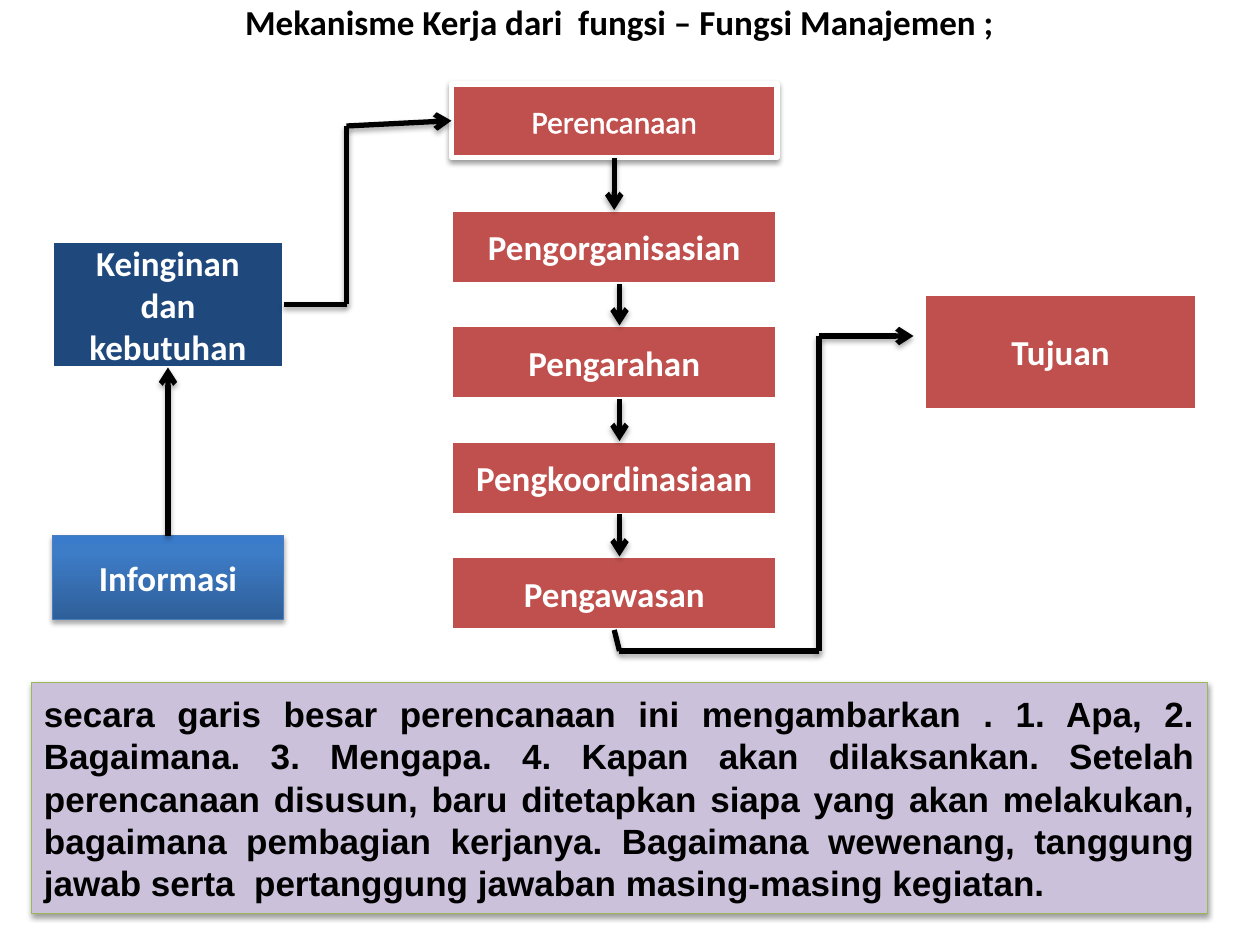
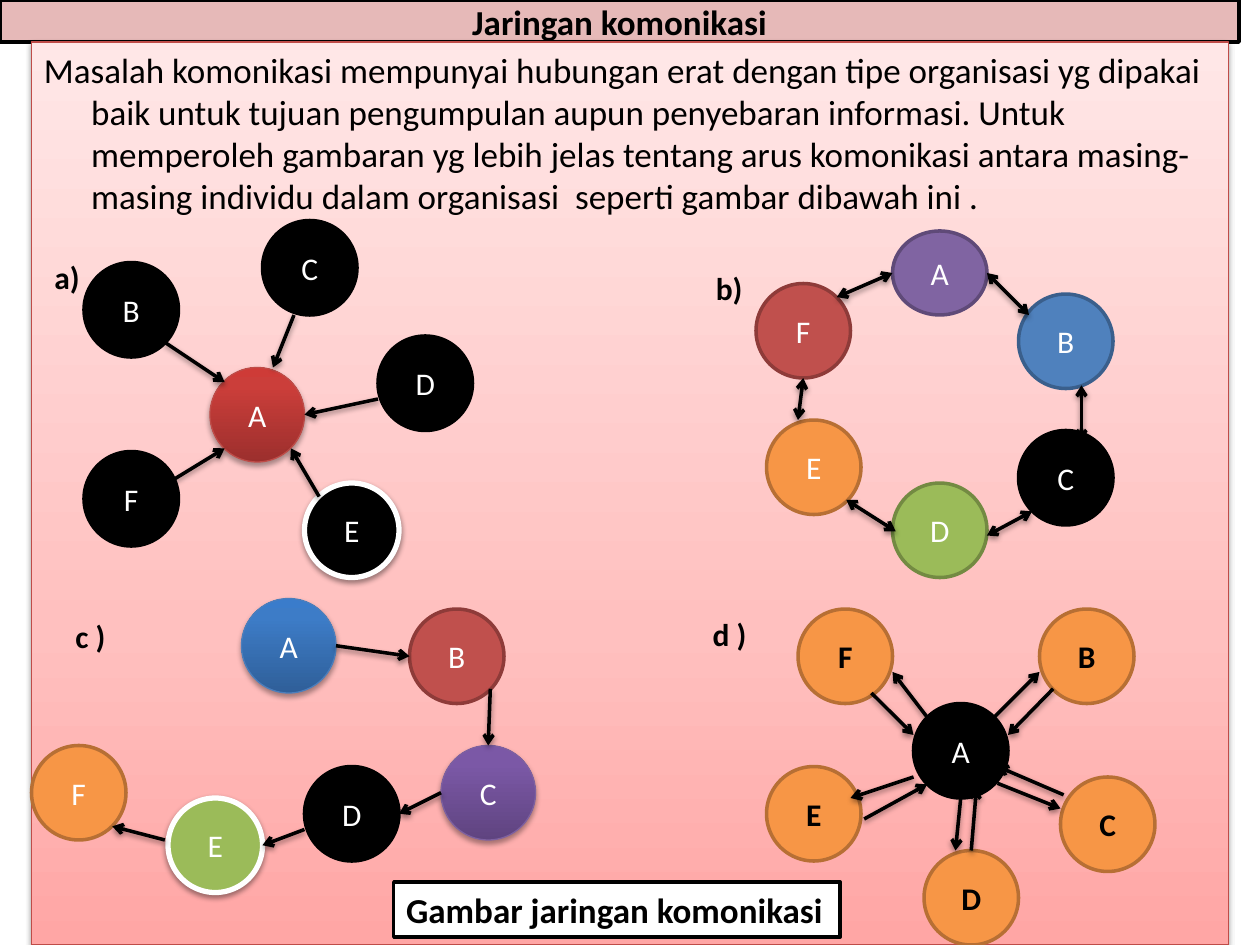
from dataclasses import dataclass, replace
from itertools import pairwise
from typing import NamedTuple

from lxml.etree import SubElement
from pptx import Presentation
from pptx.dml.color import RGBColor
from pptx.enum.shapes import MSO_CONNECTOR, MSO_SHAPE
from pptx.enum.text import MSO_ANCHOR, MSO_AUTO_SIZE, PP_ALIGN
from pptx.oxml.ns import qn
from pptx.util import Cm, Pt

GRID_CM = 2.54 / 12


class Shadow(NamedTuple):
    opacity: int
    distance: float


@dataclass(frozen=True)
class Theme:
    font: str = "Calibri"
    note_font: str = "Arial"
    large: int = 20
    small: int = 18
    black: str = "000000"
    white: str = "FFFFFF"
    navy: str = "1F497D"
    red: str = "C0504D"
    red_edge: str = "8E3B39"
    red_line: str = "BF4C48"
    blue: str = "4F81BD"
    blue_edge: str = "3A5F8C"
    blue_line: str = "4B7EBC"
    green: str = "9BBB59"
    green_edge: str = "738A42"
    green_line: str = "98B955"
    purple: str = "8064A2"
    purple_edge: str = "5F4A78"
    purple_line: str = "7D60A0"
    orange: str = "F79646"
    orange_edge: str = "B76F34"
    lilac: str = "CCC1DA"
    pink: str = "E6B9B8"
    blue_gradient: tuple = ((0, "2F5F99"), (80, "3D7CC7"), (100, "3A7CCB"))
    red_gradient: tuple = ((0, "9C2F2D"), (80, "CB3E3A"), (100, "CE3B37"))
    purple_gradient: tuple = ((0, "5F4480"), (80, "7B58A6"), (100, "7C57A8"))
    rose_gradient: tuple = ((0, "FFA6A5"), (35, "FFC0BF"), (100, "FFE7E7"))
    strong_shadow: Shadow = Shadow(35, 1.8)
    soft_shadow: Shadow = Shadow(38, 1.6)


THEME = Theme()


@dataclass(frozen=True)
class Style:
    fill: str | tuple | None
    line: str | None
    width: float = 2
    shadow: Shadow | None = None
    color: str = THEME.white
    size: int = THEME.small
    bold: bool = False
    font: str = THEME.font
    align: PP_ALIGN = PP_ALIGN.CENTER
    anchor: MSO_ANCHOR = MSO_ANCHOR.MIDDLE
    wrap: bool = True


class Box(NamedTuple):
    text: str
    left: float
    top: float
    width: float
    height: float
    style: Style


class Node(NamedTuple):
    text: str
    left: float
    top: float
    style: Style
    height: float = 9


class Network(NamedTuple):
    label: Box
    nodes: list[Node]
    links: list[tuple]
    two_way: bool = False


TITLE = Style(None, None, color=THEME.black, size=THEME.large, bold=True)
TITLE_BAND = replace(TITLE, fill=THEME.pink, line=THEME.black)
RED_BOX = Style(THEME.red, THEME.white, size=THEME.large, bold=True)
NAVY_BOX = replace(RED_BOX, fill=THEME.navy)
BLUE_BOX = replace(RED_BOX, fill=THEME.blue_gradient, line=THEME.blue_line,
                   width=0.75, shadow=THEME.strong_shadow)
PLAN_BOX = Style(THEME.red, THEME.white, 3, THEME.soft_shadow)
NOTE = Style(THEME.lilac, THEME.green_line, 0.75, THEME.soft_shadow, THEME.black,
             THEME.large, True, THEME.note_font, PP_ALIGN.JUSTIFY)
BODY = Style(THEME.rose_gradient, THEME.red_line, 0.75, THEME.soft_shadow, THEME.black,
             THEME.large, align=PP_ALIGN.LEFT, anchor=MSO_ANCHOR.TOP)
LABEL = Style(None, None, color=THEME.black, bold=True, align=PP_ALIGN.LEFT,
              anchor=MSO_ANCHOR.TOP, wrap=False)
CAPTION = replace(LABEL, fill=THEME.white, line=THEME.black, size=THEME.large)

BLACK = Style(THEME.black, THEME.black)
BLACK_RING = Style(THEME.black, THEME.white, 3, THEME.soft_shadow)
GREEN_RING = replace(BLACK_RING, fill=THEME.green)
RED = Style(THEME.red, THEME.red_edge)
BLUE = Style(THEME.blue, THEME.blue_edge)
GREEN = Style(THEME.green, THEME.green_edge)
PURPLE = Style(THEME.purple, THEME.purple_edge)
ORANGE = Style(THEME.orange, THEME.orange_edge)
ORANGE_BOLD = replace(ORANGE, color=THEME.black, bold=True)
GLOSSY_RED = Style(THEME.red_gradient, THEME.red_line, 0.75, THEME.strong_shadow)
GLOSSY_BLUE = Style(THEME.blue_gradient, THEME.blue_line, 0.75, THEME.strong_shadow)
GLOSSY_PURPLE = Style(THEME.purple_gradient, THEME.purple_line, 0.75, THEME.strong_shadow)

NOTE_TEXT = (
    "secara garis besar perencanaan ini mengambarkan . 1. Apa, 2. Bagaimana. "
    "3. Mengapa. 4. Kapan akan dilaksankan. Setelah perencanaan disusun, baru "
    "ditetapkan siapa yang akan melakukan, bagaimana pembagian kerjanya. Bagaimana "
    "wewenang, tanggung jawab serta  pertanggung jawaban masing-masing kegiatan."
)
BODY_TEXT = (
    "Masalah komonikasi mempunyai hubungan erat dengan tipe organisasi yg dipakai "
    "baik untuk tujuan pengumpulan aupun penyebaran informasi. Untuk memperoleh "
    "gambaran yg lebih jelas tentang arus komonikasi antara masing-masing individu "
    "dalam organisasi  seperti gambar dibawah ini ."
)
STEPS = ["Pengorganisasian", "Pengarahan", "Pengkoordinasiaan", "Pengawasan"]
STEP_TOP, STEP_PITCH, STEP_HEIGHT = 20, 11, 7

ROUTES = [
    [(16, 51), (16, 35)],
    [(27, 29), (33, 29), (33, 12), (43, 11.5)],
    [(58.5, 60), (59, 62), (78, 62), (78, 32), (87, 32)],
    [(58.5, 15), (58.5, 20)],
]

NETWORKS = [
    Network(
        Box("a)", 4, 24, 4.9, 4.8, LABEL),
        [Node("B", 8, 25, BLACK), Node("A", 20, 35, GLOSSY_RED), Node("C", 25, 21, BLACK),
         Node("D", 36, 32, BLACK), Node("F", 8, 43, BLACK), Node("E", 29, 46, BLACK_RING)],
        [((28, 30), (26, 35)), ((16, 46), (21.4, 42.7)), ((30.4, 47.3), (27.7, 42.7)),
         ((36, 38), (29, 39.5)), ((15.7, 32.6), (21.4, 36.4))],
    ),
    Network(
        Box("b)", 67, 25, 5, 4.8, LABEL),
        [Node("C", 97, 41, BLACK), Node("B", 97, 28, BLUE), Node("E", 73, 40, ORANGE),
         Node("F", 72, 27, RED), Node("D", 85, 46, GREEN), Node("A", 85, 22, PURPLE, 8)],
        [((79.7, 28.3), (85, 26)), ((76, 40), (76.5, 36)), ((94, 26), (98, 30)),
         ((80.6, 47.6), (85.3, 50.6)), ((94, 51), (98.3, 48.7)), ((103, 42), (103, 36.7))],
        two_way=True,
    ),
    Network(
        Box("c )", 6, 58.2, 5.3, 4.8, LABEL),
        [Node("F", 3, 71, ORANGE), Node("E", 16, 76, GREEN_RING), Node("D", 29, 73, BLACK),
         Node("C", 42, 71, GLOSSY_PURPLE), Node("B", 39, 58, RED),
         Node("A", 23, 57, GLOSSY_BLUE)],
        [((42, 75.5), (38, 77.5)), ((46.7, 65.6), (46.5, 71)), ((29, 79), (25, 80.5)),
         ((15.7, 80), (10.7, 78.7)), ((32, 61.5), (39, 62.5))],
    ),
    Network(
        Box("d )", 66.7, 58, 5.6, 4.8, LABEL),
        [Node("D", 88, 81, ORANGE_BOLD), Node("C", 101, 74, ORANGE_BOLD),
         Node("E", 73, 73, ORANGE_BOLD), Node("F", 76, 58, ORANGE_BOLD),
         Node("B", 99, 58, ORANGE_BOLD), Node("A", 87, 67, BLACK)],
        [((100.3, 65.6), (96, 70)), ((94.7, 68.3), (99, 64)), ((87, 74), (81, 76)),
         ((91.5, 76), (91, 81)), ((88.3, 68.3), (85, 64)), ((101.3, 75.7), (95, 73)),
         ((92.5, 81), (93, 75)), ((82.3, 78), (88.3, 74.7)), ((83, 66), (87, 70)),
         ((95, 74.6), (101, 77))],
    ),
]


def grid(units: float) -> Cm:
    return Cm(units * GRID_CM)


def add_color(parent, color: str):
    return SubElement(parent, qn("a:srgbClr"), val=color)


def set_shadow(properties, shadow: Shadow | None) -> None:
    effects = SubElement(properties, qn("a:effectLst"))
    if shadow:
        outer = SubElement(effects, qn("a:outerShdw"), blurRad=str(Pt(3.1)),
                           dist=str(Pt(shadow.distance)), dir="5400000", rotWithShape="0")
        color = add_color(outer, THEME.black)
        SubElement(color, qn("a:alpha"), val=str(shadow.opacity * 1000))


def set_fill(shape, fill: str | tuple | None) -> None:
    if fill is None:
        shape.fill.background()
    elif isinstance(fill, str):
        shape.fill.solid()
        shape.fill.fore_color.rgb = RGBColor.from_string(fill)
    else:
        shape.fill.gradient()
        shape.fill.gradient_angle = 90
        stops = shape._element.spPr.find(".//" + qn("a:gsLst"))
        for stop in list(stops):
            stops.remove(stop)
        for position, color in fill:
            add_color(SubElement(stops, qn("a:gs"), pos=str(position * 1000)), color)


def add_box(slide, box: Box, preset: MSO_SHAPE = MSO_SHAPE.RECTANGLE):
    style = box.style
    place = [grid(value) for value in box[1:5]]
    if style.fill is None:
        shape = slide.shapes.add_textbox(*place)
    else:
        shape = slide.shapes.add_shape(preset, *place)
        set_fill(shape, style.fill)
        shape.line.color.rgb = RGBColor.from_string(style.line)
        shape.line.width = Pt(style.width)
        set_shadow(shape._element.spPr, style.shadow)
    frame = shape.text_frame
    frame.text = box.text
    frame.word_wrap = style.wrap
    frame.auto_size = MSO_AUTO_SIZE.NONE if style.wrap else MSO_AUTO_SIZE.SHAPE_TO_FIT_TEXT
    frame.vertical_anchor = style.anchor
    paragraph = frame.paragraphs[0]
    paragraph.alignment = style.align
    font = paragraph.runs[0].font
    font.name, font.size, font.bold = style.font, Pt(style.size), style.bold
    font.color.rgb = RGBColor.from_string(style.color)
    return shape


def add_link(slide, start: tuple, end: tuple, width: float, shadow: Shadow,
             head: bool = False, tail: bool = True) -> None:
    points = [grid(value) for value in (*start, *end)]
    connector = slide.shapes.add_connector(MSO_CONNECTOR.STRAIGHT, *points)
    connector.line.color.rgb = RGBColor.from_string(THEME.black)
    connector.line.width = Pt(width)
    properties = connector._element.spPr
    for tag, shown in (("a:headEnd", head), ("a:tailEnd", tail)):
        if shown:
            SubElement(properties.find(qn("a:ln")), qn(tag), type="arrow")
    set_shadow(properties, shadow)


def add_route(slide, points: list[tuple]) -> None:
    for start, end in pairwise(points):
        add_link(slide, start, end, 3, THEME.strong_shadow, tail=end == points[-1])


def outline_text(shape, color: str, width: float) -> None:
    properties = shape.text_frame.paragraphs[0].runs[0]._r.get_or_add_rPr()
    outline = SubElement(properties, qn("a:ln"), w=str(Pt(width)))
    add_color(SubElement(outline, qn("a:solidFill")), color)
    properties.insert(0, outline)


def add_title(slide, text: str, style: Style) -> None:
    add_box(slide, Box(text, 0, 0, 118, 4, style))


def build_mechanism(slide) -> None:
    add_title(slide, "Mekanisme Kerja dari  fungsi – Fungsi Manajemen ;", TITLE)
    add_box(slide, Box("Informasi", 5, 51, 22, 8, BLUE_BOX))
    add_box(slide, Box("Keinginan dan kebutuhan", 5, 23, 22, 12, NAVY_BOX))
    plan = add_box(slide, Box("Perencanaan", 43, 8, 31, STEP_HEIGHT, PLAN_BOX))
    outline_text(plan, THEME.white, 1.45)
    tops = [STEP_TOP + index * STEP_PITCH for index in range(len(STEPS))]
    for text, top in zip(STEPS, tops):
        add_box(slide, Box(text, 43, top, 31, STEP_HEIGHT, RED_BOX))
    add_box(slide, Box("Tujuan", 88, 28, 26, 11, RED_BOX))
    step_links = [[(59, top + STEP_HEIGHT), (59, below)] for top, below in pairwise(tops)]
    for points in ROUTES + step_links:
        add_route(slide, points)
    add_box(slide, Box(NOTE_TEXT, 3, 65, 112, 22, NOTE))


def build_networks(slide) -> None:
    add_title(slide, "Jaringan komonikasi", TITLE_BAND)
    body = add_box(slide, Box(BODY_TEXT, 3, 4, 114, 86, BODY))
    paragraph = body.text_frame.paragraphs[0]
    paragraph.space_before = Pt(4)
    indent = paragraph._p.get_or_add_pPr()
    indent.set("marL", str(grid(4.5)))
    indent.set("indent", str(-grid(4.5)))
    for network in NETWORKS:
        for node in network.nodes:
            circle = Box(node.text, node.left, node.top, 9, node.height, node.style)
            add_box(slide, circle, MSO_SHAPE.OVAL)
        for start, end in network.links:
            add_link(slide, start, end, 2, THEME.soft_shadow, head=network.two_way)
        add_box(slide, network.label)
    add_box(slide, Box("Gambar jaringan komonikasi", 37.5, 84, 42.5, 5.25, CAPTION))


def main() -> None:
    presentation = Presentation()
    presentation.slide_width, presentation.slide_height = grid(120), grid(90)
    for build in (build_mechanism, build_networks):
        build(presentation.slides.add_slide(presentation.slide_layouts[6]))
    presentation.save("out.pptx")


if __name__ == "__main__":
    main()
